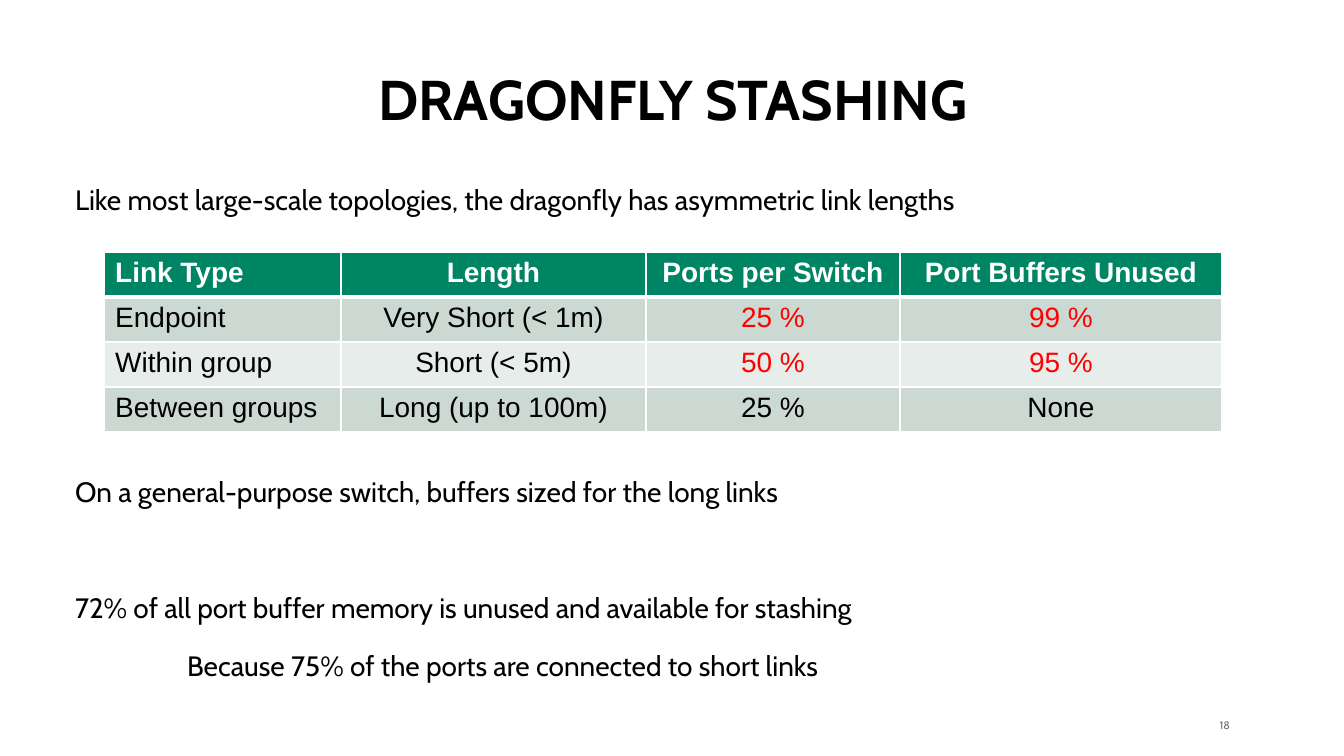
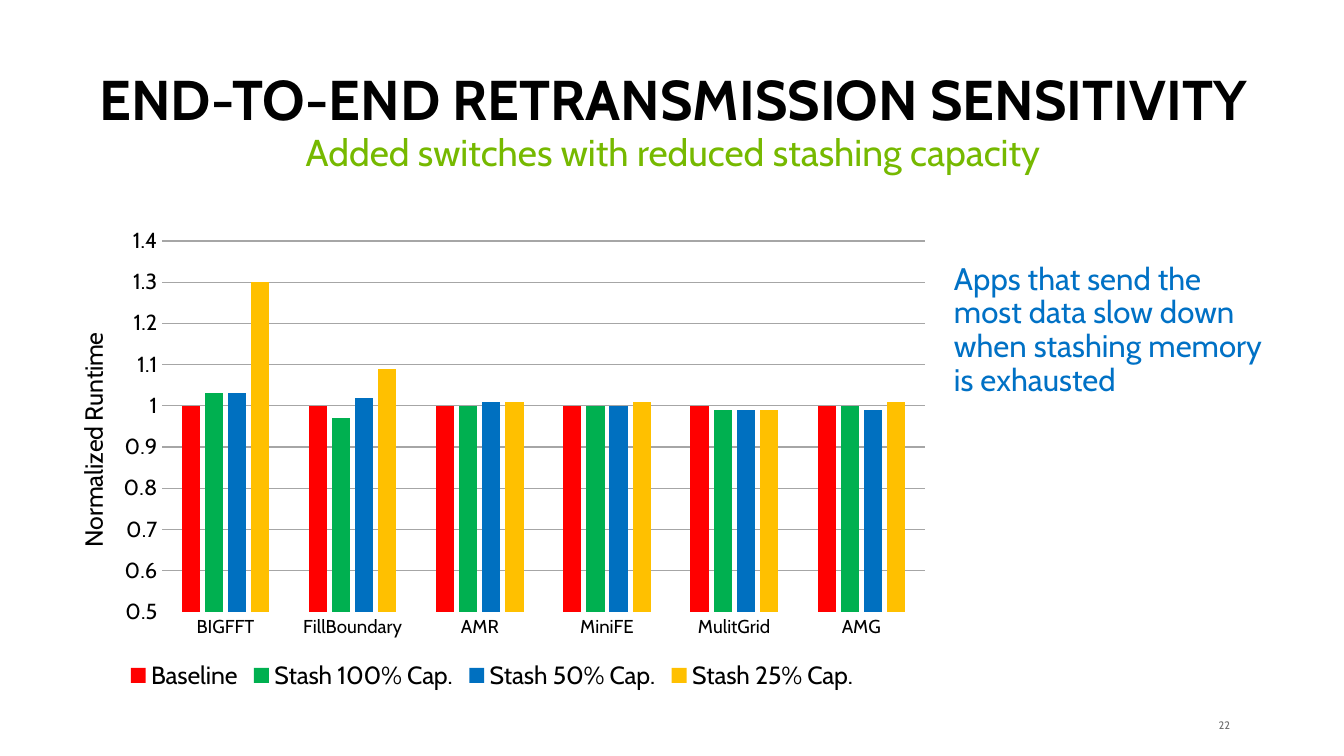
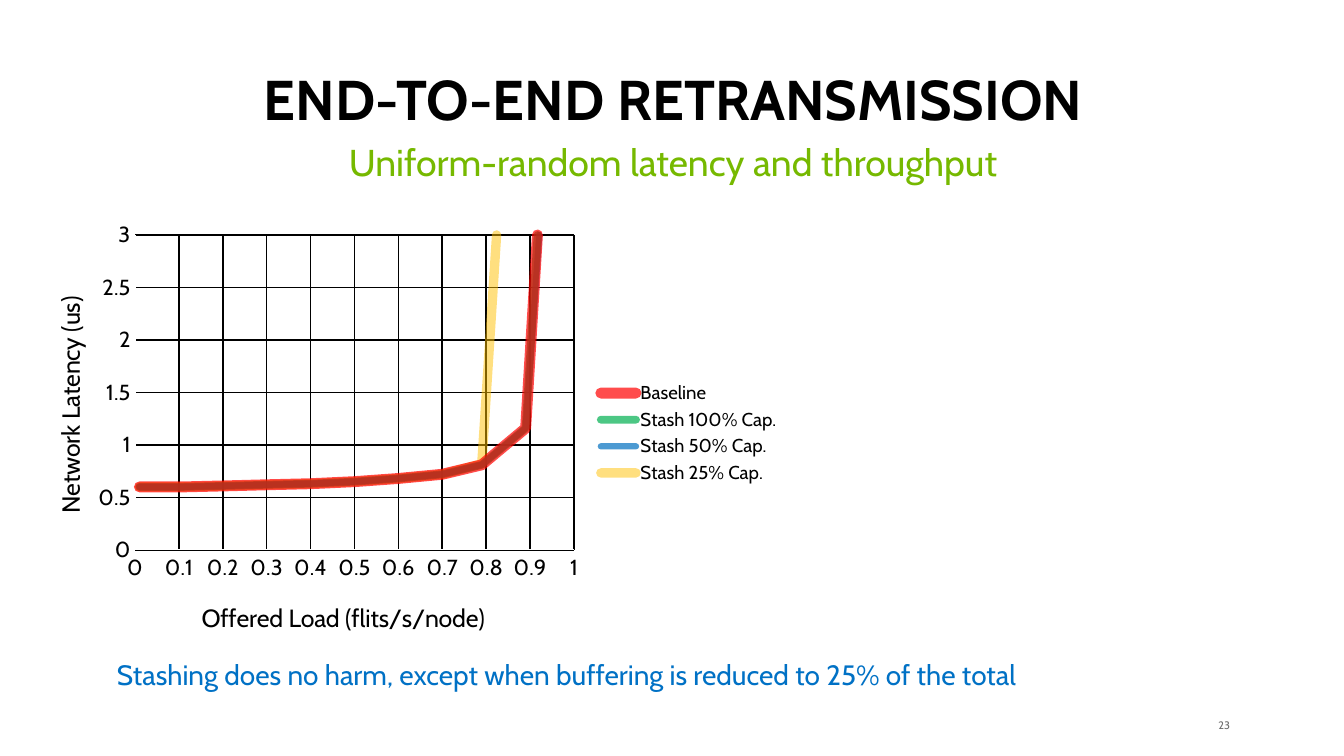
from dataclasses import dataclass
from typing import Optional

from lxml.etree import SubElement
from pptx import Presentation
from pptx.chart.chart import Chart
from pptx.chart.data import CategoryChartData, XyChartData
from pptx.dml.color import RGBColor
from pptx.enum.chart import XL_CHART_TYPE as CT, XL_LEGEND_POSITION as LP, XL_TICK_MARK as TM
from pptx.enum.text import MSO_ANCHOR as MA, PP_ALIGN as PA
from pptx.oxml.ns import qn
from pptx.oxml.xmlchemy import OxmlElement
from pptx.slide import Slide
from pptx.util import Emu, Pt

BLACK = RGBColor(0x00, 0x00, 0x00)
WHITE = RGBColor(0xFF, 0xFF, 0xFF)
GREY = RGBColor(0x6E, 0x6E, 0x6E)
GRID = RGBColor(0xA6, 0xA6, 0xA6)
LIME = RGBColor(0x76, 0xB9, 0x00)
NOTE = RGBColor(0x00, 0x71, 0xC5)
HEAD = RGBColor(0x00, 0x85, 0x64)
BANDS = (RGBColor(0xCC, 0xD9, 0xD3), RGBColor(0xE7, 0xED, 0xEA))
RED = RGBColor(0xFF, 0x00, 0x00)
GREEN = RGBColor(0x00, 0xB0, 0x50)
BLUE = RGBColor(0x00, 0x70, 0xC0)
AMBER = RGBColor(0xFF, 0xC0, 0x00)
FONT = "Cabin"
EMU_PER_PX = 914400 / 112


def px(n: int) -> Emu:
    return Emu(round(n * EMU_PER_PX))


@dataclass(frozen=True)
class Box:
    x: int
    y: int
    w: int
    h: int

    def emu(self) -> tuple[Emu, Emu, Emu, Emu]:
        return px(self.x), px(self.y), px(self.w), px(self.h)


@dataclass(frozen=True)
class Para:
    text: str
    before: int = 9
    indent: int = 0


@dataclass(frozen=True)
class Style:
    size: int
    color: RGBColor = BLACK
    bold: bool = False
    align: PA = PA.LEFT
    anchor: MA = MA.TOP
    inset: bool = True


@dataclass(frozen=True)
class Series:
    name: str
    color: RGBColor
    vals: tuple[float, ...]
    width: int = 0
    alpha: int = 100


@dataclass(frozen=True)
class AxisStyle:
    low: float
    high: float
    unit: float
    grid: RGBColor
    grid_width: float
    line: Optional[RGBColor] = None


@dataclass(frozen=True)
class AxisTitle:
    text: str
    x: int
    y: int
    vertical: bool = False


TITLE = Style(36, bold=True, align=PA.CENTER, anchor=MA.BOTTOM)
SUBTITLE = Style(24, LIME, align=PA.CENTER)
BODY = Style(18)
CALLOUT = Style(20, NOTE)
TAKEAWAY = Style(18, NOTE)
PAGE = Style(7, GREY, align=PA.RIGHT, anchor=MA.MIDDLE, inset=False)

LINKS = (
    ("Link Type", "Length", "Ports per Switch", "Port Buffers Unused"),
    ("Endpoint", "Very Short (< 1m)", "25 %", "99 %"),
    ("Within group", "Short (< 5m)", "50 %", "95 %"),
    ("Between groups", "Long (up to 100m)", "25 %", "None"),
)
LINK_COLS = (237, 305, 254, 322)
LINK_ROW = 45

APPS = ("BIGFFT", "FillBoundary", "AMR", "MiniFE", "MulitGrid", "AMG")
RUNTIMES = (
    Series("Baseline", RED, (1, 1, 1, 1, 1, 1)),
    Series("Stash 100% Cap.", GREEN, (1.03, 0.97, 1, 1, 0.99, 1)),
    Series("Stash 50% Cap.", BLUE, (1.03, 1.02, 1.01, 1, 0.99, 0.99)),
    Series("Stash 25% Cap.", AMBER, (1.3, 1.09, 1.01, 1.01, 0.99, 1.01)),
)

LOADS = (0.01, 0.11, 0.21, 0.3, 0.4, 0.5, 0.6, 0.7, 0.79, 0.89, 0.99)
LIGHT = (0.6, 0.6, 0.61, 0.62, 0.63, 0.65, 0.68, 0.72)
LATENCIES = (
    Series("Baseline", RED, (*LIGHT, 0.81, 1.16, 8.03), 7, 70),
    Series("Stash 100% Cap.", GREEN, (*LIGHT, 0.81, 1.16, 7.96), 5, 70),
    Series("Stash 50% Cap.", BLUE, (*LIGHT, 0.81, 1.16, 7.11), 4, 70),
    Series("Stash 25% Cap.", AMBER, (*LIGHT, 0.82, 7.28, 7.28), 6, 50),
)


def set_font(font, size: int, color: RGBColor, bold: bool = False, name: str = FONT) -> None:
    font.size, font.bold, font.name = Pt(size), bold, name
    font.color.rgb = color


def add_text(slide: Slide, box: Box, style: Style, *paras: Para) -> None:
    tf = slide.shapes.add_textbox(*box.emu()).text_frame
    tf.word_wrap = True
    tf.vertical_anchor = style.anchor
    if not style.inset:
        tf.margin_left = tf.margin_right = tf.margin_top = tf.margin_bottom = 0
    for i, para in enumerate(paras):
        p = tf.add_paragraph() if i else tf.paragraphs[0]
        p.alignment = style.align
        p.line_spacing = 0.9
        if i:
            p.space_before = Pt(para.before)
        if len(paras) > 1:
            p.space_after = Pt(9)
        if para.indent:
            p._p.get_or_add_pPr().set("marL", str(px(para.indent)))
        r = p.add_run()
        r.text = para.text
        set_font(r.font, style.size, style.color, style.bold)


def add_slide(prs, title: str, page: int) -> Slide:
    slide = prs.slides.add_slide(prs.slide_layouts[6])
    add_text(slide, Box(1194, 718, 36, 17), PAGE, Para(str(page)))
    add_text(slide, Box(62, 65, 1222, 73), TITLE, Para(title))
    return slide


def set_borders(cell, top: int, bottom: int) -> None:
    tc_pr = cell._tc.get_or_add_tcPr()
    for side, width in (("L", 1), ("R", 1), ("T", top), ("B", bottom)):
        ln = SubElement(tc_pr, qn(f"a:ln{side}"), w=str(Pt(width)))
        fill = SubElement(ln, qn("a:solidFill"))
        SubElement(fill, qn("a:srgbClr"), val=str(WHITE))


def add_link_table(slide: Slide, x: int, y: int) -> None:
    box = Box(x, y, sum(LINK_COLS), LINK_ROW * len(LINKS))
    table = slide.shapes.add_table(len(LINKS), len(LINK_COLS), *box.emu()).table
    for col, width in zip(table.columns, LINK_COLS):
        col.width = px(width)
    for i, row in enumerate(LINKS):
        table.rows[i].height = px(LINK_ROW)
        for j, text in enumerate(row):
            cell = table.cell(i, j)
            set_borders(cell, 3 if i == 1 else 1, 3 if i == 0 else 1)
            cell.fill.solid()
            cell.fill.fore_color.rgb = BANDS[(i - 1) % 2] if i else HEAD
            p = cell.text_frame.paragraphs[0]
            p.alignment = PA.CENTER if j else PA.LEFT
            r = p.add_run()
            r.text = text
            unused = i in (1, 2) and j >= 2
            color = WHITE if i == 0 else RED if unused else BLACK
            set_font(r.font, 18, color, i == 0, "Arial")


def set_layout(parent, index: int, frame: Box, x: int, y: int, size: Optional[tuple[int, int]] = None) -> None:
    old = parent.find(qn("c:layout"))
    if old is not None:
        parent.remove(old)
    layout = OxmlElement("c:layout")
    parent.insert(index, layout)
    manual = SubElement(layout, qn("c:manualLayout"))
    values = {"xMode": "edge", "yMode": "edge",
              "x": (x - frame.x) / frame.w, "y": (y - frame.y) / frame.h}
    if size:
        SubElement(manual, qn("c:layoutTarget"), val="inner")
        values |= {"w": size[0] / frame.w, "h": size[1] / frame.h}
    for tag, value in values.items():
        SubElement(manual, qn(f"c:{tag}"), val=str(value))


def style_scale(axis, look: AxisStyle) -> None:
    axis.minimum_scale, axis.maximum_scale, axis.major_unit = look.low, look.high, look.unit
    axis.has_major_gridlines = True
    line = axis.major_gridlines.format.line
    line.color.rgb, line.width = look.grid, Pt(look.grid_width)
    axis.tick_labels.number_format = "General"
    axis.tick_labels.number_format_is_linked = False
    style_axis(axis, 14, look.line)


def style_axis(axis, size: int, color: Optional[RGBColor]) -> None:
    axis.major_tick_mark = axis.minor_tick_mark = TM.NONE
    set_font(axis.tick_labels.font, size, BLACK)
    line = axis.format.line
    if color is None:
        line.fill.background()
    else:
        line.color.rgb, line.width = color, Pt(0.75)


def title_axis(axis, title: AxisTitle, frame: Box) -> None:
    tf = axis.axis_title.text_frame
    r = tf.paragraphs[0].add_run()
    r.text = title.text
    set_font(r.font, 16, BLACK)
    if title.vertical:
        body = tf._txBody.bodyPr
        body.set("rot", "-5400000")
        body.set("vert", "horz")
    set_layout(axis.axis_title._element, 1, frame, title.x, title.y)


def add_chart(slide: Slide, kind: CT, data, frame: Box, plot: Box, legend: LP, legend_size: int) -> Chart:
    chart = slide.shapes.add_chart(kind, *frame.emu(), data).chart
    chart.has_title = False
    set_font(chart.font, 10, BLACK)
    chart.has_legend = True
    chart.legend.position = legend
    chart.legend.include_in_layout = False
    set_font(chart.legend.font, legend_size, BLACK)
    area = chart._chartSpace.chart.plotArea
    set_layout(area, 0, frame, plot.x, plot.y, (plot.w, plot.h))
    return chart


def add_runtime_chart(slide: Slide) -> None:
    frame = Box(41, 218, 902, 477)
    data = CategoryChartData()
    data.categories = APPS
    for s in RUNTIMES:
        data.add_series(s.name, s.vals)
    chart = add_chart(slide, CT.COLUMN_CLUSTERED, data, frame, Box(162, 241, 763, 371), LP.BOTTOM, 16)
    bars = chart.plots[0]
    bars.gap_width, bars.overlap, bars.vary_by_categories = 219, -27, False
    for bar, s in zip(bars.series, RUNTIMES):
        bar.format.fill.solid()
        bar.format.fill.fore_color.rgb = s.color
    style_axis(chart.category_axis, 12, WHITE)
    style_scale(chart.value_axis, AxisStyle(0.5, 1.4, 0.1, GRID, 0.75))
    title_axis(chart.value_axis, AxisTitle("Normalized Runtime", 72, 328, True), frame)


def add_latency_chart(slide: Slide) -> None:
    frame = Box(19, 213, 773, 440)
    data = XyChartData()
    for s in LATENCIES:
        points = data.add_series(s.name)
        for load, latency in zip(LOADS, s.vals):
            points.add_data_point(load, latency)
    chart = add_chart(slide, CT.XY_SCATTER_LINES_NO_MARKERS, data, frame, Box(135, 235, 439, 315), LP.RIGHT, 12)
    chart.plots[0].vary_by_categories = False
    for curve, s in zip(chart.plots[0].series, LATENCIES):
        curve.smooth = False
        line = curve.format.line
        line.color.rgb, line.width = s.color, Pt(s.width)
        ln = curve._element.find(".//" + qn("a:ln"))
        ln.set("cap", "rnd")
        SubElement(ln.find(".//" + qn("a:srgbClr")), qn("a:alpha"), val=str(s.alpha * 1000))
    style_scale(chart.category_axis, AxisStyle(0, 1, 0.1, BLACK, 1, WHITE))
    style_scale(chart.value_axis, AxisStyle(0, 3, 0.5, BLACK, 1, WHITE))
    title_axis(chart.category_axis, AxisTitle("Offered Load (flits/s/node)", 197, 597), frame)
    title_axis(chart.value_axis, AxisTitle("Network Latency (us)", 49, 292, True), frame)


def main() -> None:
    """Build the three stashing slides and save them."""
    prs = Presentation()
    prs.slide_width, prs.slide_height = px(1344), px(756)

    slide = add_slide(prs, "DRAGONFLY STASHING", 18)
    add_text(
        slide, Box(64, 181, 1219, 522), BODY,
        Para("Like most large-scale topologies, the dragonfly has asymmetric link lengths"),
        Para("On a general-purpose switch, buffers sized for the long links", before=159),
        Para("72% of all port buffer memory is unused and available for stashing", before=46),
        Para("Because 75% of the ports are connected to short links", indent=112),
    )
    add_link_table(slide, 104, 252)

    slide = add_slide(prs, "END-TO-END RETRANSMISSION SENSITIVITY", 22)
    add_text(slide, Box(943, 258, 339, 354), CALLOUT,
             Para("Apps that send the most data slow down when stashing memory is exhausted"))
    add_text(slide, Box(62, 129, 1222, 64), SUBTITLE, Para("Added switches with reduced stashing capacity"))
    add_runtime_chart(slide)

    slide = add_slide(prs, "END-TO-END RETRANSMISSION", 23)
    add_text(slide, Box(62, 656, 1220, 57), TAKEAWAY,
             Para("Stashing does no harm, except when buffering is reduced to 25% of the total", indent=44))
    add_text(slide, Box(62, 139, 1222, 64), SUBTITLE, Para("Uniform-random latency and throughput"))
    add_latency_chart(slide)

    prs.save("out.pptx")


if __name__ == "__main__":
    main()
